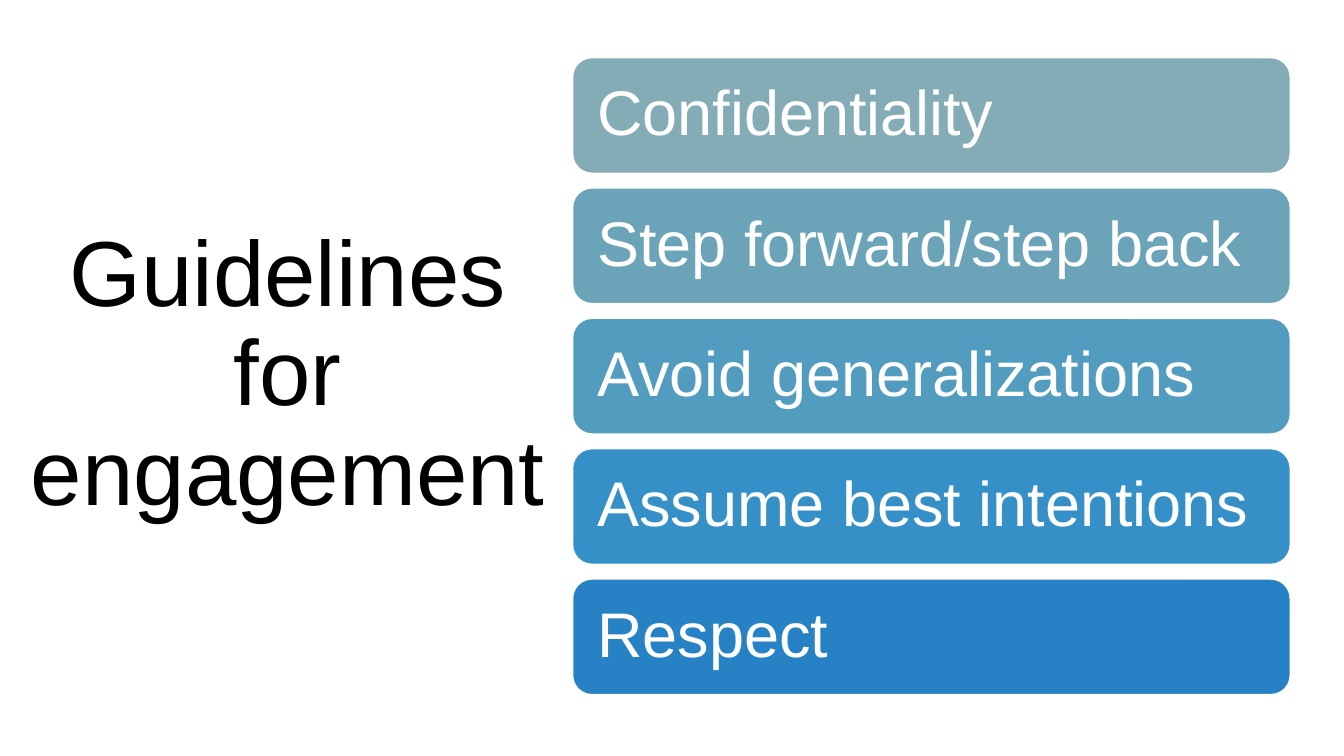
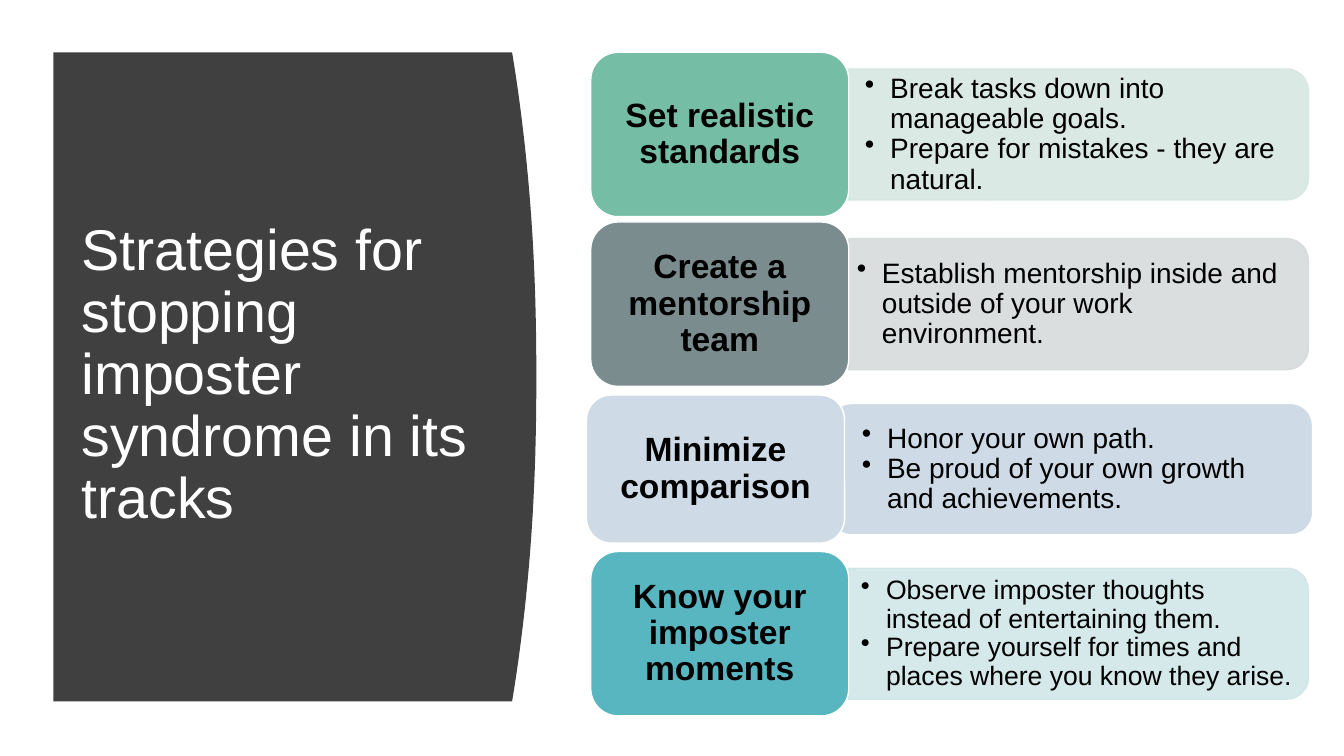
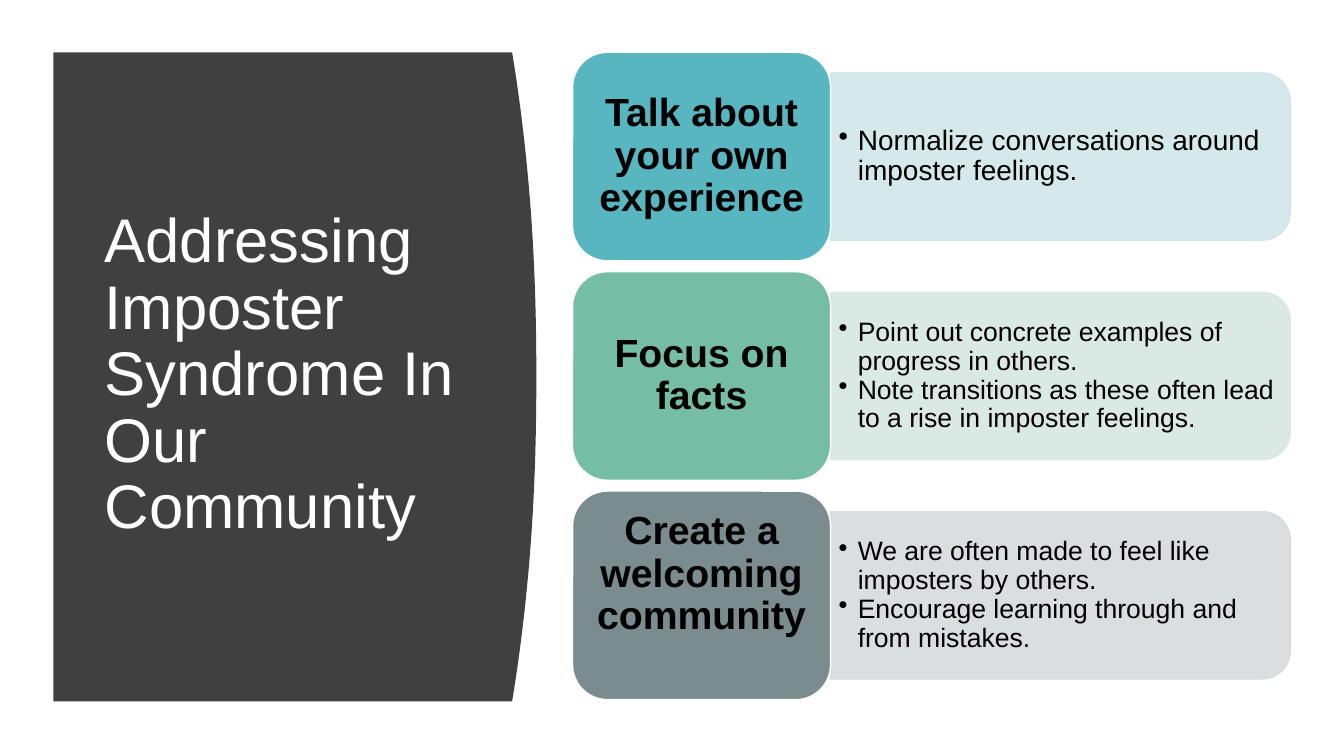
from lxml.etree import SubElement
from pptx import Presentation
from pptx.dml.color import RGBColor
from pptx.enum.shapes import MSO_SHAPE
from pptx.enum.text import MSO_ANCHOR, PP_ALIGN
from pptx.oxml.ns import qn
from pptx.util import Pt

FONT = "Arial"
COLORS = {
    "black": "000000", "white": "FFFFFF", "charcoal": "404040",
    "teal": "58B6C0", "teal_tint": "D0E5E8",
    "green": "75BDA5", "green_tint": "D5E7E1",
    "slate": "7A8C8E", "slate_tint": "D6DADA",
    "mist": "CEDBE6", "mist_tint": "CEDBE6",
    "guide_1": "84ACB6", "guide_2": "6BA4B9", "guide_3": "529CBF",
    "guide_4": "3690C8", "guide_5": "2682C4",
}
ROUNDING = 0.167
CARD_WIDTH = 184.3
PANEL_WIDTH = 328.3
DETAIL_WIDTH = 322.6

GUIDELINES = [
    "Confidentiality",
    "Step forward/step back",
    "Avoid generalizations",
    "Assume best intentions",
    "Respect",
]

STRATEGIES = {
    "title": ["Strategies for stopping", "imposter syndrome in its tracks"],
    "title_box": (51.1, 80, 314, 377),
    "title_size": 41,
    "label_size": 24,
    "indent": 18,
    "panel_height": 93.6,
    "cards": [
        {"label": "Set realistic standards", "color": "green", "left": 422, "top": 37.4,
         "height": 117.4, "detail_left": 612, "size": 20,
         "details": ["Break tasks down into manageable goals.",
                     "Prepare for mistakes - they are natural."]},
        {"label": "Create a mentorship team", "color": "slate", "left": 422, "top": 158.6,
         "height": 117.4, "detail_left": 606.2, "size": 20,
         "details": ["Establish mentorship inside and outside of your work environment."]},
        {"label": "Minimize comparison", "color": "mist", "left": 419, "top": 282.2,
         "height": 105.8, "detail_left": 609.8, "size": 20, "rounded_panel": True,
         "details": ["Honor your own path.",
                     "Be proud of your own growth and achievements."]},
        {"label": "Know your imposter moments", "color": "teal", "left": 422, "top": 394,
         "height": 117.4, "detail_left": 609.1, "size": 19,
         "details": ["Observe imposter thoughts instead of entertaining them.",
                     "Prepare yourself for times and places where you know they arise."]},
    ],
}

COMMUNITY_LEFT = 409
COMMUNITY_CARDS = [
    ("Talk about your own experience", "teal", 20, 0,
     ["Normalize conversations around imposter feelings."]),
    ("Focus on facts", "green", 19, 0,
     ["Point out concrete examples of progress in others.",
      "Note transitions as these often lead to a rise in imposter feelings."]),
    ("Create a welcoming community", "slate", 19, 30,
     ["We are often made to feel like imposters by others.",
      "Encourage learning through and from mistakes."]),
]
COMMUNITY = {
    "title": ["Addressing Imposter Syndrome In Our Community"],
    "title_box": (67.7, 80, 304.6, 377),
    "title_size": 44,
    "label_size": 28,
    "indent": 13.6,
    "panel_height": 119.5,
    "cards": [
        {"label": label, "color": color, "left": COMMUNITY_LEFT, "top": 37.4 + 156.7 * index,
         "height": 149, "detail_left": COMMUNITY_LEFT + CARD_WIDTH, "size": size,
         "lift": lift, "details": details}
        for index, (label, color, size, lift, details) in enumerate(COMMUNITY_CARDS)
    ],
}


def rgb(name):
    return RGBColor.from_string(COLORS[name])


def write_text(shape, lines, size, color="black", bold=False, align=PP_ALIGN.LEFT,
               insets=(7.2, 3.6, 7.2, 3.6), bullet_indent=None):
    frame = shape.text_frame
    frame.word_wrap = True
    frame.vertical_anchor = MSO_ANCHOR.MIDDLE
    frame.margin_left, frame.margin_top, frame.margin_right, frame.margin_bottom = map(Pt, insets)
    for index, line in enumerate(lines):
        paragraph = frame.add_paragraph() if index else frame.paragraphs[0]
        paragraph.alignment = align
        paragraph.line_spacing = 0.9
        run = paragraph.add_run()
        run.text = line
        run.font.name = FONT
        run.font.size = Pt(size)
        run.font.bold = bold
        run.font.color.rgb = rgb(color)
        if bullet_indent:
            properties = paragraph._p.get_or_add_pPr()
            properties.set("marL", str(Pt(bullet_indent)))
            properties.set("indent", str(-Pt(bullet_indent)))
            SubElement(properties, qn("a:buChar")).set("char", "•")


def add_text_box(slide, box, lines, size, **text_format):
    write_text(slide.shapes.add_textbox(*map(Pt, box)), lines, size, **text_format)


def add_block(slide, kind, box, fill, line, line_width=1):
    shape = slide.shapes.add_shape(kind, *map(Pt, box))
    shape.shadow.inherit = False
    shape.adjustments[0] = ROUNDING
    shape.fill.solid()
    shape.fill.fore_color.rgb = rgb(fill)
    shape.line.color.rgb = rgb(line)
    shape.line.width = Pt(line_width)
    return shape


def add_side_panel(slide):
    left, right, top, bottom, bulge, steps = 38.2, 365.8, 37.4, 501.1, 17.3, 48
    middle, half = (top + bottom) / 2, (bottom - top) / 2
    curve = []
    for step in range(steps + 1):
        offset = 2 * step / steps - 1
        curve.append((Pt(right + bulge * (1 - abs(offset) ** 2.2)), Pt(middle + half * offset)))
    builder = slide.shapes.build_freeform(Pt(left), Pt(top))
    builder.add_line_segments(curve + [(Pt(left), Pt(bottom))], close=True)
    panel = builder.convert_to_shape()
    panel.shadow.inherit = False
    panel.fill.solid()
    panel.fill.fore_color.rgb = rgb("charcoal")
    panel.line.fill.background()


def add_detail_panel(slide, card, height):
    tint = card["color"] + "_tint"
    middle = card["top"] + card["height"] / 2
    if card.get("rounded_panel"):
        box = (592.6, middle - height / 2, 344.9, height)
        add_block(slide, MSO_SHAPE.ROUNDED_RECTANGLE, box, tint, "white", 0.75)
        return
    center = card["left"] + CARD_WIDTH + PANEL_WIDTH / 2
    box = (center - height / 2, middle - PANEL_WIDTH / 2, height, PANEL_WIDTH)
    panel = add_block(slide, MSO_SHAPE.ROUND_2_SAME_RECTANGLE, box, tint, tint)
    panel.adjustments[1] = 0
    panel.rotation = 90
    for color in panel._element.spPr.iter(qn("a:srgbClr")):
        SubElement(color, qn("a:alpha")).set("val", "88000")


def add_card(slide, card, content):
    height = content["panel_height"]
    add_detail_panel(slide, card, height)
    detail_height = height - 10
    detail_top = card["top"] + (card["height"] - detail_height) / 2
    add_text_box(slide, (card["detail_left"], detail_top, DETAIL_WIDTH, detail_height),
                 card["details"], card["size"], insets=(5.8, 2.9, 5.8, 2.9),
                 bullet_indent=content["indent"])
    block = add_block(slide, MSO_SHAPE.ROUNDED_RECTANGLE,
                      (card["left"], card["top"], CARD_WIDTH, card["height"]),
                      card["color"], "white")
    write_text(block, [card["label"]], content["label_size"], bold=True,
               align=PP_ALIGN.CENTER, insets=(8.6, 4.3, 8.6, 4.3 + card.get("lift", 0)))


def build_guidelines(slide):
    add_text_box(slide, (13, 80, 385.2, 377), ["Guidelines for engagement"], 66,
                 align=PP_ALIGN.CENTER)
    for index, guideline in enumerate(GUIDELINES):
        bar = add_block(slide, MSO_SHAPE.ROUNDED_RECTANGLE,
                        (409, 41.2 + 93.1 * index, 512.6, 82.6),
                        f"guide_{index + 1}", "white")
        write_text(bar, [guideline], 45, color="white", insets=(13.5,) * 4)


def build_cards(slide, content):
    add_side_panel(slide)
    add_text_box(slide, content["title_box"], content["title"], content["title_size"],
                 color="white")
    for card in content["cards"]:
        add_card(slide, card, content)


def main():
    presentation = Presentation()
    presentation.slide_width = Pt(960)
    presentation.slide_height = Pt(540)
    blank = presentation.slide_layouts[6]
    build_guidelines(presentation.slides.add_slide(blank))
    for content in (STRATEGIES, COMMUNITY):
        build_cards(presentation.slides.add_slide(blank), content)
    presentation.save("out.pptx")


if __name__ == "__main__":
    main()
